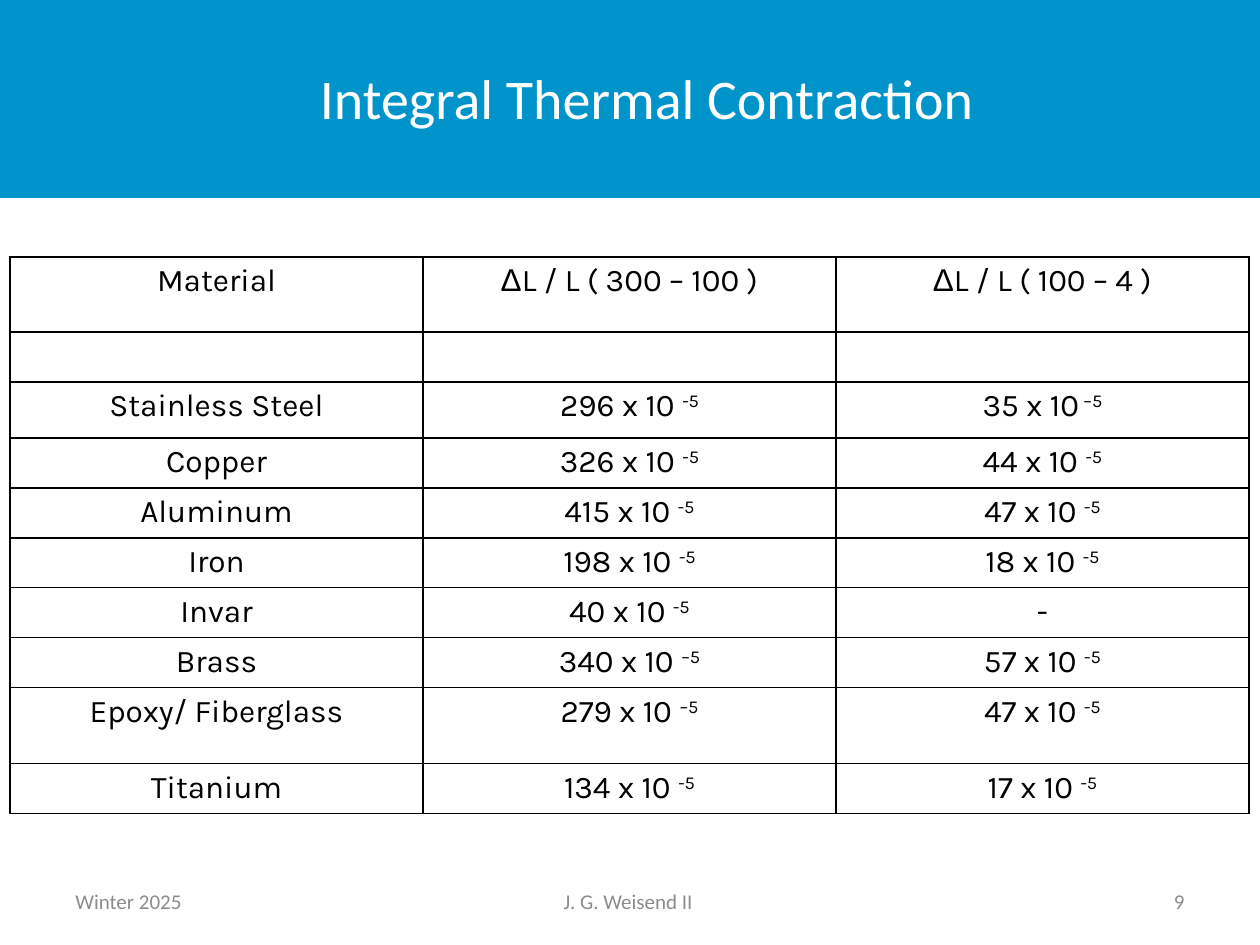
from pptx import Presentation, util as u
from pptx.dml.color import RGBColor
from pptx.enum import shapes, text
from pptx.oxml import ns
from lxml import etree

PX_PER_INCH = 126
ALIGN = text.PP_ALIGN


def px(length):
    return u.Emu(round(length * u.Inches(1) / PX_PER_INCH))


def color(hex_string):
    return RGBColor.from_string(hex_string)


class SlideBuilder:
    blue, white, grey, black = "0094CA", "FFFFFF", "8C8C8C", "000000"
    heading_font, table_font, symbol_font = "Calibri", "Karla", "Arial"

    def __init__(self, slide):
        self.slide = slide

    def place(self, shape, box):
        for side, length in zip(("left", "top", "width", "height"), box):
            setattr(shape, side, px(length))

    def add_words(self, paragraph, words, size, name, ink, align):
        paragraph.alignment = align
        run = paragraph.add_run()
        run.text = words
        for key, value in {"size": u.Pt(size), "name": name, "bold": False}.items():
            setattr(run.font, key, value)
        run.font.color.rgb = color(ink)
        return run

    def band(self, box):
        band = self.slide.shapes.add_shape(
            shapes.MSO_SHAPE.RECTANGLE, *map(px, box))
        band.shadow.inherit = False
        band.fill.solid()
        band.fill.fore_color.rgb = color(self.blue)
        band.line.fill.background()
        # Send the band behind the title
        self.slide.shapes._spTree.insert(2, band._element)

    def title(self, words, box):
        title = self.slide.shapes.title
        self.place(title, box)
        title.text_frame.vertical_anchor = text.MSO_ANCHOR.MIDDLE
        self.add_words(title.text_frame.paragraphs[0], words, 32,
                       self.heading_font, self.white, ALIGN.CENTER)

    def footer(self, words, box, align):
        frame = self.slide.shapes.add_textbox(*map(px, box)).text_frame
        frame.word_wrap = True
        frame.vertical_anchor = text.MSO_ANCHOR.MIDDLE
        self.add_words(frame.paragraphs[0], words, 12, self.heading_font,
                       self.grey, align)

    def border(self, cell):
        properties = cell._tc.get_or_add_tcPr()
        for position, side in enumerate(("lnL", "lnR", "lnT", "lnB")):
            line = etree.Element(ns.qn(f"a:{side}"), w=str(u.Pt(1)))
            fill = etree.SubElement(line, ns.qn("a:solidFill"))
            etree.SubElement(fill, ns.qn("a:srgbClr"), val=self.black)
            properties.insert(position, line)

    def cell(self, cell, words):
        """Fill one cell; text after ^ is raised."""
        margins = {"margin_left": 14, "margin_right": 14,
                   "margin_top": 6, "margin_bottom": 6}
        for side, length in margins.items():
            setattr(cell, side, px(length))
        cell.fill.background()
        self.border(cell)
        paragraph = cell.text_frame.paragraphs[0]
        if not words:
            # Keep the empty line from stretching its row
            etree.SubElement(paragraph._p, ns.qn("a:endParaRPr"), sz="1600")
            return
        look = (self.black, ALIGN.CENTER)
        if words.startswith("Δ"):
            self.add_words(paragraph, "Δ", 18, self.symbol_font, *look)
            words = words[1:]
        base, _, exponent = words.partition("^")
        self.add_words(paragraph, base, 18, self.table_font, *look)
        if exponent:
            raised = self.add_words(paragraph, exponent, 18,
                                    self.table_font, *look)
            raised._r.get_or_add_rPr().set("baseline", "30000")

    def table(self, rows, left, top, column_width, heights):
        columns = len(rows[0])
        table = self.slide.shapes.add_table(
            len(rows), columns, px(left), px(top),
            px(column_width * columns), px(sum(heights))).table
        table.first_row = table.horz_banding = False
        for column in table.columns:
            column.width = px(column_width)
        for row, height, values in zip(table.rows, heights, rows):
            row.height = px(height)
            for cell, words in zip(row.cells, values):
                self.cell(cell, words)


CONTRACTIONS = [
    ("Material", "ΔL / L ( 300 – 100 )", "ΔL / L ( 100 – 4 )"),
    ("", "", ""),
    ("Stainless Steel", "296 x 10 ^-5", "35 x 10^ –5"),
    ("Copper", "326 x 10 ^-5", "44 x 10 ^-5"),
    ("Aluminum", "415 x 10 ^-5", "47 x 10 ^-5"),
    ("Iron", "198 x 10 ^-5", "18 x 10 ^-5"),
    ("Invar", "40 x 10 ^-5", "-"),
    ("Brass", "340 x 10 ^–5", "57 x 10 ^-5"),
    ("Epoxy/ Fiberglass", "279 x 10 ^–5", "47 x 10 ^-5"),
    ("Titanium", "134 x 10 ^-5", "17 x 10 ^-5"),
]
TALL_ROWS = {"Material": 75, "Stainless Steel": 56, "Epoxy/ Fiberglass": 76}


def main():
    deck = Presentation()
    deck.slide_width, deck.slide_height = px(1260), px(945)
    builder = SlideBuilder(deck.slides.add_slide(deck.slide_layouts[5]))

    # Heading
    builder.band((0, 0, 1260, 198))
    builder.title("Integral Thermal Contraction", (155, 18, 984, 158))

    # Contraction by material
    heights = [TALL_ROWS.get(row[0], 50) for row in CONTRACTIONS]
    builder.table(CONTRACTIONS, 10, 257, 413, heights)

    # Footer
    builder.footer("Winter 2025", (63, 876, 294, 50), ALIGN.LEFT)
    builder.footer("J. G. Weisend II ", (431, 876, 399, 50), ALIGN.CENTER)
    builder.footer("9", (903, 876, 294, 50), ALIGN.RIGHT)

    deck.save("out.pptx")


if __name__ == "__main__":
    main()
